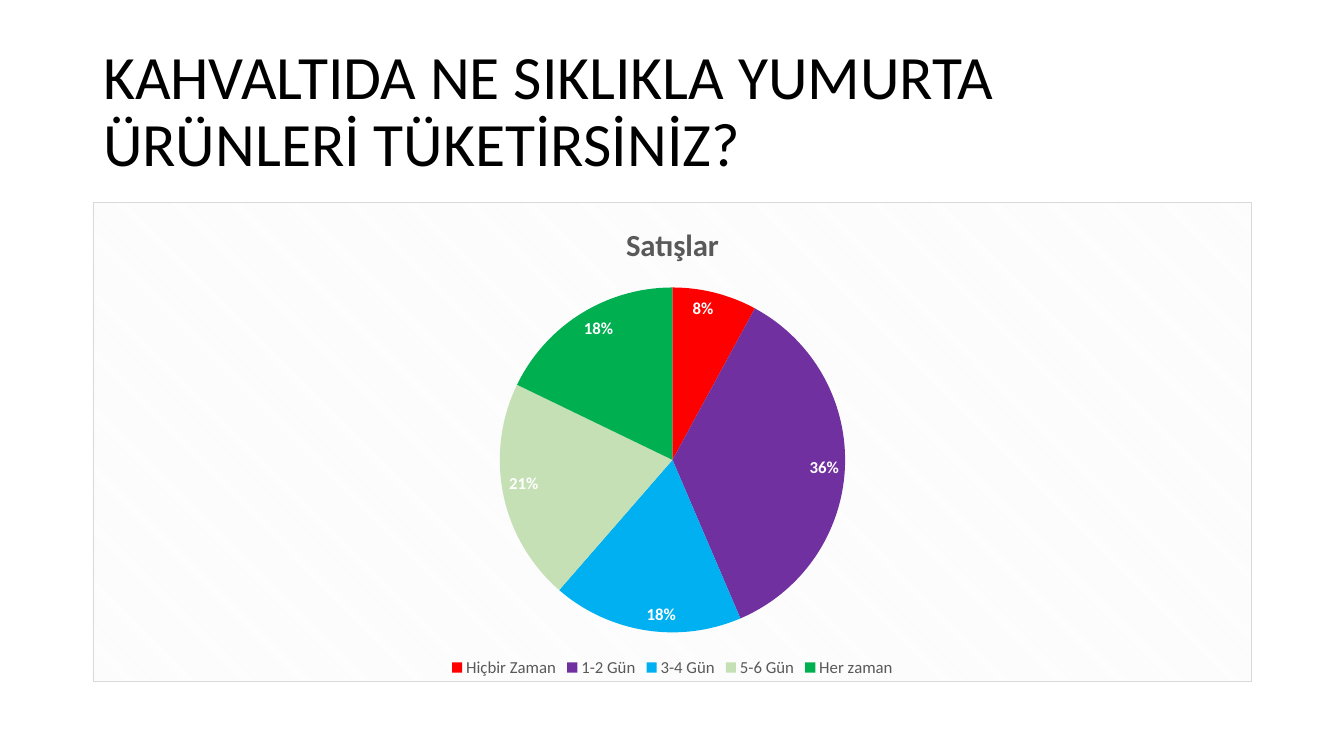
from dataclasses import dataclass

from pptx import Presentation
from pptx import util as u
from pptx.chart.data import CategoryChartData
from pptx.dml.color import RGBColor
from pptx.enum import chart as ch, text
from pptx.oxml import parse_xml
from pptx.oxml.ns import nsdecls, qn

QUESTION = "KAHVALTIDA NE SIKLIKLA YUMURTA ÜRÜNLERİ TÜKETİRSİNİZ?"
SERIES = "Satışlar"
ANSWERS = [  # answer, value, slice colour
    ("Hiçbir Zaman", 8, "FF0000"),
    ("1-2 Gün", 36, "7030A0"),
    ("3-4 Gün", 18, "00B0F0"),
    ("5-6 Gün", 21, "C5E0B4"),
    ("Her zaman", 18, "00B050"),
]

PX = 914400 / 100.8
SLIDE = (1344, 756)
LEFT, WIDTH = 93, 1159
TITLE_BOX = (LEFT, 40, WIDTH, 146)
CHART_BOX = (LEFT, 202, WIDTH, 480)


@dataclass(frozen=True)
class Theme:
    face: str = "Calibri"
    black: str = "000000"
    grey: str = "595959"
    white: str = "FFFFFF"
    stripe: str = "F2F2F2"
    border: str = "D9D9D9"
    question: int = 44
    heading: int = 22
    label: int = 12
    base: int = 10


THEME = Theme()


def px(*lengths):
    return [u.Emu(round(n * PX)) for n in lengths]


def style(font, size, color, bold=False):
    font.name, font.size, font.bold = THEME.face, u.Pt(size), bold
    font.color.rgb = RGBColor.from_string(color)


def frame_chart(chart):
    """Give the chart area its diagonal pattern and thin border."""
    area = parse_xml(
        f'<c:spPr {nsdecls("c", "a")}><a:pattFill prst="dkDnDiag">'
        f'<a:fgClr><a:srgbClr val="{THEME.stripe}"/></a:fgClr>'
        f'<a:bgClr><a:srgbClr val="{THEME.white}"/></a:bgClr></a:pattFill>'
        f'<a:ln w="{u.Pt(0.75)}"><a:solidFill><a:srgbClr val="{THEME.border}"/>'
        '</a:solidFill></a:ln></c:spPr>')
    chart.element.find(qn("c:chart")).addnext(area)


def add_question(s):
    title = s.shapes.title
    title.left, title.top, title.width, title.height = px(*TITLE_BOX)
    tf = title.text_frame
    tf.word_wrap = True
    tf.auto_size = text.MSO_AUTO_SIZE.NONE
    tf.vertical_anchor = text.MSO_ANCHOR.MIDDLE
    p = tf.paragraphs[0]
    p.alignment, p.line_spacing = text.PP_ALIGN.LEFT, 0.9
    r = p.add_run()
    r.text = QUESTION
    style(r.font, THEME.question, THEME.black)


def add_pie(s):
    names, values, colors = zip(*ANSWERS)
    data = CategoryChartData()
    data.categories = names
    data.add_series(SERIES, values)
    chart = s.shapes.add_chart(ch.XL_CHART_TYPE.PIE, *px(*CHART_BOX), data).chart
    style(chart.font, THEME.base, THEME.black)
    frame_chart(chart)

    chart.has_title = True
    chart.chart_title.include_in_layout = False
    r = chart.chart_title.text_frame.paragraphs[0].add_run()
    r.text = SERIES
    style(r.font, THEME.heading, THEME.grey, bold=True)

    chart.has_legend = True
    chart.legend.position = ch.XL_LEGEND_POSITION.BOTTOM
    chart.legend.include_in_layout = False
    style(chart.legend.font, THEME.label, THEME.grey)

    plot = chart.plots[0]
    plot.vary_by_categories = True
    for i, color in enumerate(colors):
        fill = plot.series[0].points[i].format.fill
        fill.solid()
        fill.fore_color.rgb = RGBColor.from_string(color)

    labels = plot.series[0].data_labels
    labels.show_percentage, labels.show_value = True, False
    labels.number_format, labels.number_format_is_linked = "0%", False
    labels.position = ch.XL_LABEL_POSITION.INSIDE_END
    style(labels.font, THEME.label, THEME.white, bold=True)


def main():
    prs = Presentation()
    prs.slide_width, prs.slide_height = px(*SLIDE)
    s = prs.slides.add_slide(prs.slide_layouts.get_by_name("Title Only"))
    add_question(s)
    add_pie(s)
    prs.save("out.pptx")


if __name__ == "__main__":
    main()
